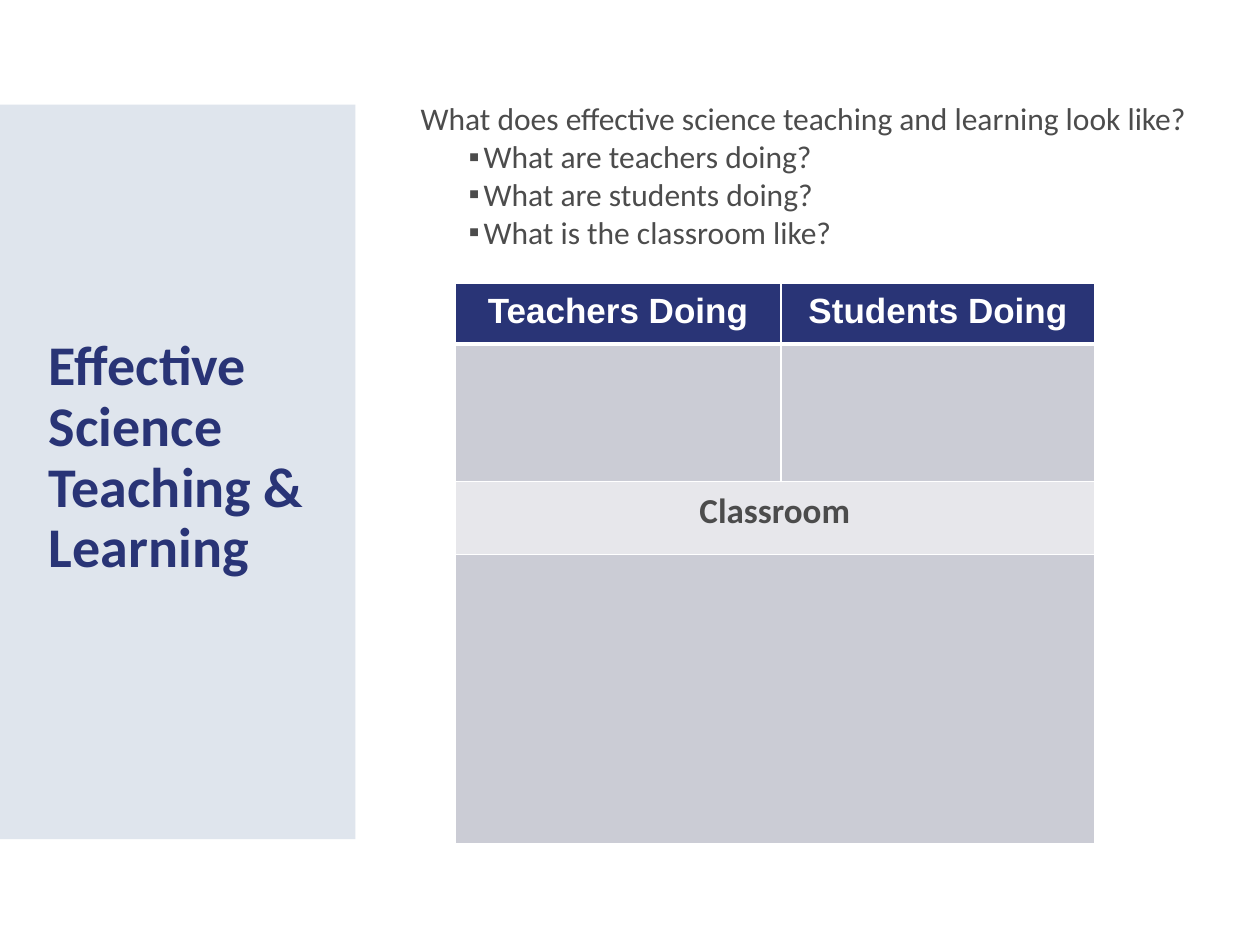
from dataclasses import dataclass

from lxml.etree import SubElement
from pptx import Presentation
from pptx.dml.color import RGBColor
from pptx.enum.shapes import MSO_SHAPE
from pptx.enum.text import MSO_ANCHOR, PP_ALIGN
from pptx.oxml.ns import qn
from pptx.util import Inches, Pt


@dataclass(frozen=True)
class Theme:
    navy: str = "293476"
    text: str = "4C4C4C"
    white: str = "FFFFFF"
    panel: str = "DFE5ED"
    dark_band: str = "CBCCD5"
    light_band: str = "E7E7EB"
    body_font: str = "Calibri"
    header_font: str = "Arial"
    title_size: int = 32
    table_size: int = 20
    body_size: int = 18
    thin: int = 1
    thick: int = 3


THEME = Theme()


def paint(fill, color):
    fill.solid()
    fill.fore_color.rgb = RGBColor.from_string(color)


def add_run(para, text, font, size, color, bold=False):
    span = para.add_run()
    span.text = text
    span.font.name = font
    span.font.size = Pt(size)
    span.font.bold = bold
    span.font.color.rgb = RGBColor.from_string(color)


def add_panel(page, left, top, width, height):
    panel = page.shapes.add_shape(
        MSO_SHAPE.RECTANGLE, Inches(left), Inches(top), Inches(width), Inches(height))
    panel.shadow.inherit = False
    panel.line.fill.background()
    paint(panel.fill, THEME.panel)


def add_text_frame(page, left, top, width, height, anchor=MSO_ANCHOR.TOP):
    box = page.shapes.add_textbox(
        Inches(left), Inches(top), Inches(width), Inches(height))
    frame = box.text_frame
    frame.word_wrap = True
    frame.vertical_anchor = anchor
    return frame


def add_title(page, text):
    frame = add_text_frame(page, 0.29, 2.25, 2.33, 2.4, MSO_ANCHOR.BOTTOM)
    para = frame.paragraphs[0]
    para.line_spacing = 0.9
    add_run(para, text, THEME.body_font, THEME.title_size, THEME.navy, bold=True)


def add_bullet(para):
    properties = para._p.get_or_add_pPr()
    properties.set("marL", str(Inches(0.5)))
    properties.set("indent", str(Inches(-0.12)))
    color = SubElement(properties, qn("a:buClr"))
    SubElement(color, qn("a:srgbClr"), val=THEME.text)
    SubElement(properties, qn("a:buFont"), typeface=THEME.header_font)
    SubElement(properties, qn("a:buChar"), char="▪")


def add_questions(page, lead, questions):
    frame = add_text_frame(page, 3.24, 0.74, 6.35, 1.31)
    add_run(frame.paragraphs[0], lead, THEME.body_font, THEME.body_size, THEME.text)
    for question in questions:
        para = frame.add_paragraph()
        para.level = 1
        add_bullet(para)
        add_run(para, question, THEME.body_font, THEME.body_size, THEME.text)


def style_cell(cell, color, top, bottom):
    cell.margin_left = cell.margin_right = Inches(0.14)
    cell.margin_top = cell.margin_bottom = Inches(0.07)
    properties = cell._tc.get_or_add_tcPr()
    widths = {"lnL": THEME.thin, "lnR": THEME.thin, "lnT": top, "lnB": bottom}
    for edge, width in widths.items():
        line = SubElement(properties, qn(f"a:{edge}"), w=str(Pt(width)))
        solid = SubElement(line, qn("a:solidFill"))
        SubElement(solid, qn("a:srgbClr"), val=THEME.white)
    paint(cell.fill, color)


def write_cell(cell, text, font, color):
    para = cell.text_frame.paragraphs[0]
    para.alignment = PP_ALIGN.CENTER
    add_run(para, text, font, THEME.table_size, color, bold=True)


def add_observation_table(page):
    column_widths = [2.59, 2.49]
    row_heights = [0.48, 1.09, 0.58, 2.3]
    row_colors = [THEME.navy, THEME.dark_band, THEME.light_band, THEME.dark_band]
    rules = [THEME.thin, THEME.thick, THEME.thin, THEME.thin, THEME.thin]
    table = page.shapes.add_table(
        len(row_heights), len(column_widths), Inches(3.61), Inches(2.25),
        Inches(sum(column_widths)), Inches(sum(row_heights))).table
    for column, width in zip(table.columns, column_widths):
        column.width = Inches(width)
    for index, (row, height) in enumerate(zip(table.rows, row_heights)):
        row.height = Inches(height)
        for cell in row.cells:
            style_cell(cell, row_colors[index], rules[index], rules[index + 1])
    for index in (2, 3):
        table.cell(index, 0).merge(table.cell(index, 1))
    for index, heading in enumerate(["Teachers Doing", "Students Doing"]):
        write_cell(table.cell(0, index), heading, THEME.header_font, THEME.white)
    write_cell(table.cell(2, 0), "Classroom", THEME.body_font, THEME.text)


def main():
    deck = Presentation()
    deck.slide_width = Inches(10)
    deck.slide_height = Inches(7.5)
    page = deck.slides.add_slide(deck.slide_layouts[6])
    add_panel(page, 0, 0.83, 2.82, 5.83)
    add_title(page, "Effective Science Teaching & Learning")
    add_observation_table(page)
    add_questions(
        page,
        "What does effective science teaching and learning look like?",
        ["What are teachers doing?", "What are students doing?",
         "What is the classroom like?"])
    deck.save("out.pptx")


if __name__ == "__main__":
    main()
